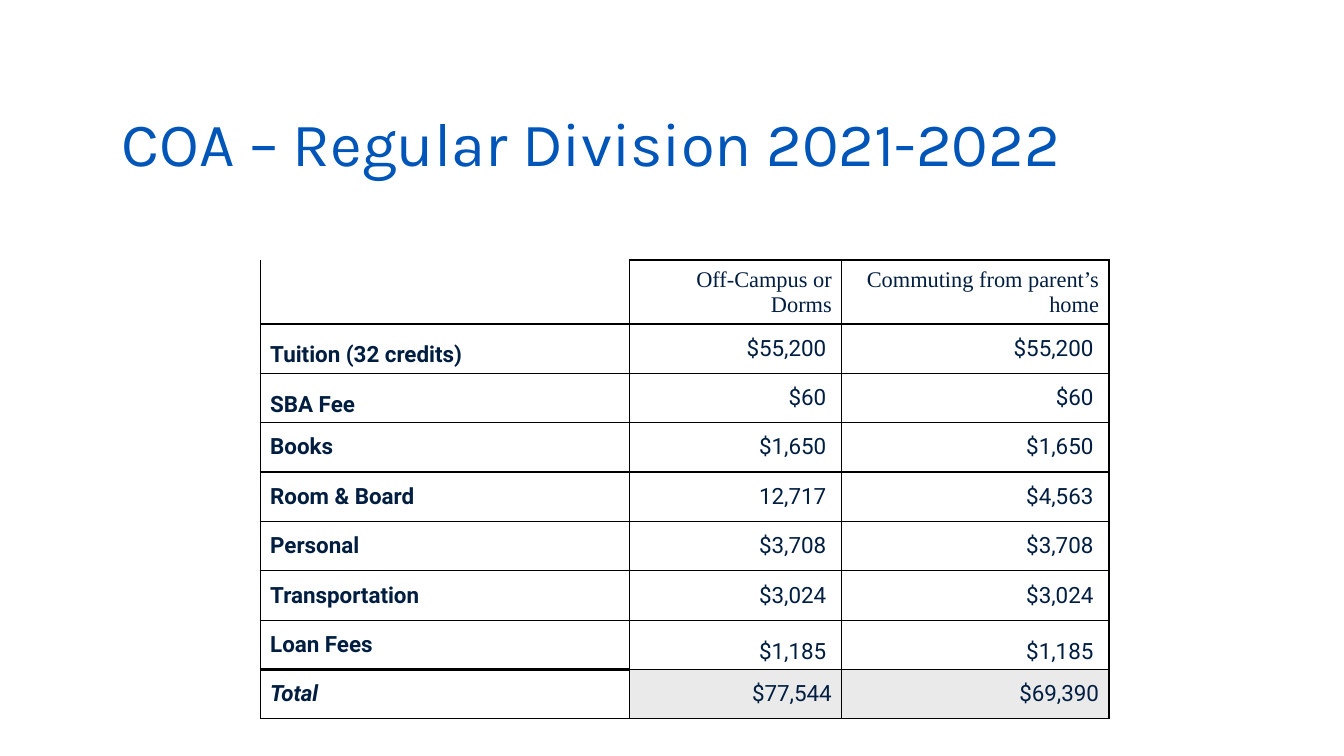
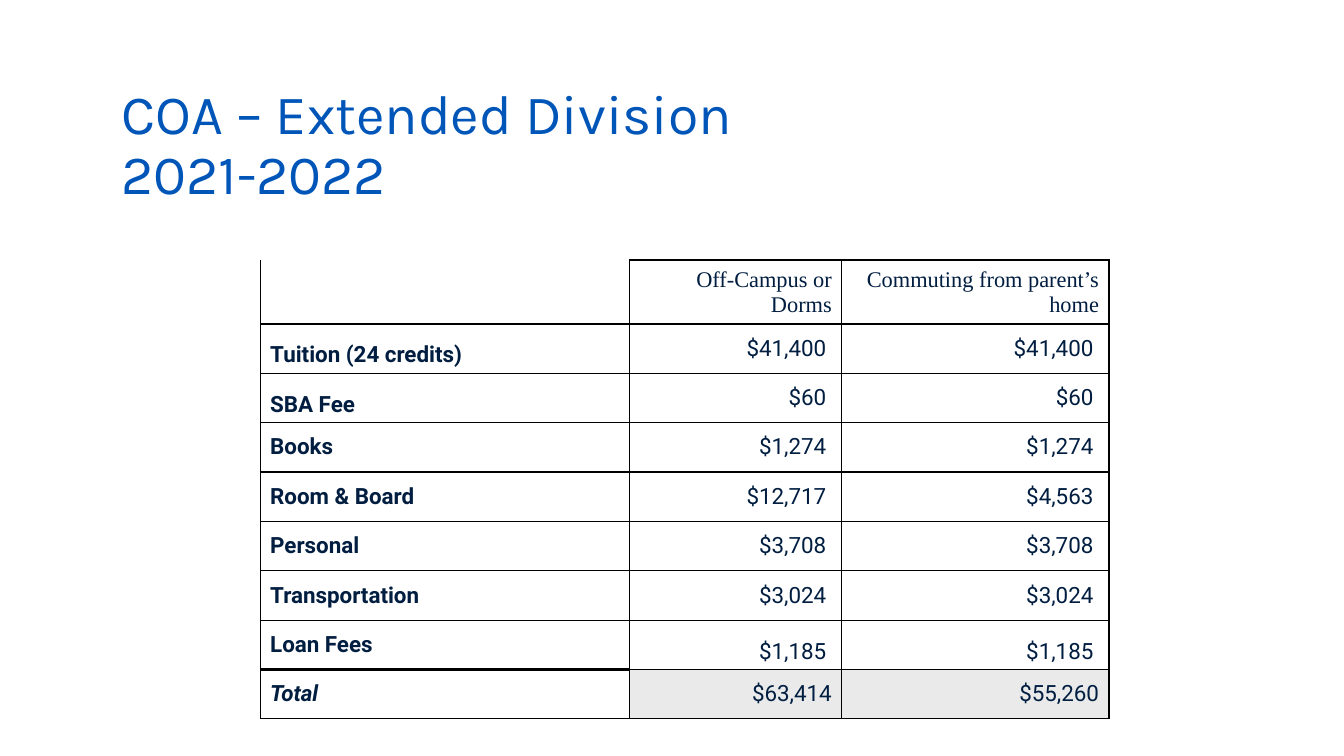
from lxml.etree import SubElement
from pptx import Presentation
from pptx.dml.color import RGBColor
from pptx.enum.text import MSO_ANCHOR as Anchor, PP_ALIGN as Align
from pptx.oxml.ns import qn
from pptx.util import Inches, Pt

BLUE = RGBColor(0x00, 0x55, 0xB8)
NAVY = RGBColor(0x01, 0x1E, 0x41)
BLACK = RGBColor(0x00, 0x00, 0x00)
GREY = RGBColor(0xEA, 0xEA, 0xEA)
WHITE = RGBColor(0xFF, 0xFF, 0xFF)

TITLE_FONT, BODY_FONT, HEADER_FONT = "Karla", "Roboto", "Times New Roman"
COLUMN_WIDTHS = (3.66, 2.11, 2.65)
ROW_HEIGHT = 0.49
HEADERS = ("", "Off-Campus or Dorms", "Commuting from parent’s home")
LOW_LABELS = ("Tuition", "SBA Fee")
LOW_AMOUNTS = ("Loan Fees",)


class CostDeck:
    def __init__(self):
        self.presentation = Presentation()
        self.presentation.slide_width = Inches(13.33)
        self.presentation.slide_height = Inches(7.5)
        self.slide = None

    def add_slide(self):
        layout = self.presentation.slide_layouts[6]
        self.slide = self.presentation.slides.add_slide(layout)

    def add_run(self, paragraph, text, size, font, color, bold=False, italic=False):
        run = paragraph.add_run()
        run.text = text
        run.font.size = Pt(size)
        run.font.name = font
        run.font.color.rgb = color
        run.font.bold = bold
        run.font.italic = italic

    def add_title(self, lines, size):
        box = self.slide.shapes.add_textbox(
            Inches(1.11), Inches(0.83), Inches(11.56), Inches(1.25))
        frame = box.text_frame
        frame.word_wrap = True
        frame.vertical_anchor = Anchor.MIDDLE
        paragraph = frame.paragraphs[0]
        paragraph.line_spacing = 0.9
        for index, line in enumerate(lines):
            if index:
                paragraph.add_line_break()
            self.add_run(paragraph, line, size, TITLE_FONT, BLUE)

    def set_borders(self, cell, **widths):
        """Draw 1 pt borders unless a side (L, R, T, B) has its own width; 0 hides it."""
        properties = cell._tc.get_or_add_tcPr()
        for side in "LRTB":
            width = widths.get(side, 1)
            line = SubElement(properties, qn(f"a:ln{side}"), w=str(Pt(width)))
            if width:
                fill = SubElement(line, qn("a:solidFill"))
                SubElement(fill, qn("a:srgbClr"), val=str(BLACK))
            else:
                SubElement(line, qn("a:noFill"))

    def fill_cell(self, cell, text, is_header, is_label, is_total):
        cell.fill.solid()
        cell.fill.fore_color.rgb = GREY if is_total and not is_label else WHITE
        if not text:
            return
        paragraph = cell.text_frame.paragraphs[0]
        paragraph.alignment = Align.LEFT if is_label else Align.RIGHT
        self.add_run(paragraph, text, 16, HEADER_FONT if is_header else BODY_FONT,
                     NAVY, bold=is_label, italic=is_label and is_total)

    def add_cost_table(self, costs):
        rows = [HEADERS, *costs]
        last = len(rows) - 1
        table = self.slide.shapes.add_table(
            len(rows), len(HEADERS), Inches(2.58), Inches(2.58),
            Inches(sum(COLUMN_WIDTHS)), Inches(ROW_HEIGHT * len(rows))).table
        table.first_row = table.horz_banding = False
        for column, width in zip(table.columns, COLUMN_WIDTHS):
            column.width = Inches(width)
        label_borders = {0: {"T": 0}, last - 1: {"B": 2}, last: {"T": 2}}

        for row_index, row in enumerate(rows):
            table.rows[row_index].height = Inches(ROW_HEIGHT)
            for column_index, text in enumerate(row):
                cell = table.cell(row_index, column_index)
                is_label = column_index == 0
                borders = label_borders.get(row_index, {}) if is_label else {}
                self.set_borders(cell, **borders)
                self.fill_cell(cell, text, row_index == 0, is_label, row_index == last)
                low_rows = LOW_LABELS if is_label else LOW_AMOUNTS
                is_low = row[0].startswith(low_rows)
                cell.vertical_anchor = Anchor.BOTTOM if is_low else Anchor.MIDDLE


def cost_rows(credits, tuition, books, dorm_board, totals):
    return [
        (f"Tuition ({credits} credits)", tuition, tuition),
        ("SBA Fee", "$60 ", "$60 "),
        ("Books", books, books),
        ("Room & Board", dorm_board, "$4,563 "),
        ("Personal", "$3,708 ", "$3,708 "),
        ("Transportation", "$3,024 ", "$3,024 "),
        ("Loan Fees", "$1,185 ", "$1,185 "),
        ("Total", *totals),
    ]


def main():
    deck = CostDeck()
    divisions = [
        (["COA – Regular Division 2021-2022"], 44,
         cost_rows(32, "$55,200 ", "$1,650 ", "12,717 ", ("$77,544", "$69,390"))),
        (["COA – Extended Division ", "2021-2022"], 39.6,
         cost_rows(24, "$41,400 ", "$1,274 ", "$12,717 ", ("$63,414", "$55,260"))),
    ]
    for title_lines, title_size, costs in divisions:
        deck.add_slide()
        deck.add_title(title_lines, title_size)
        deck.add_cost_table(costs)
    deck.presentation.save("out.pptx")


if __name__ == "__main__":
    main()
